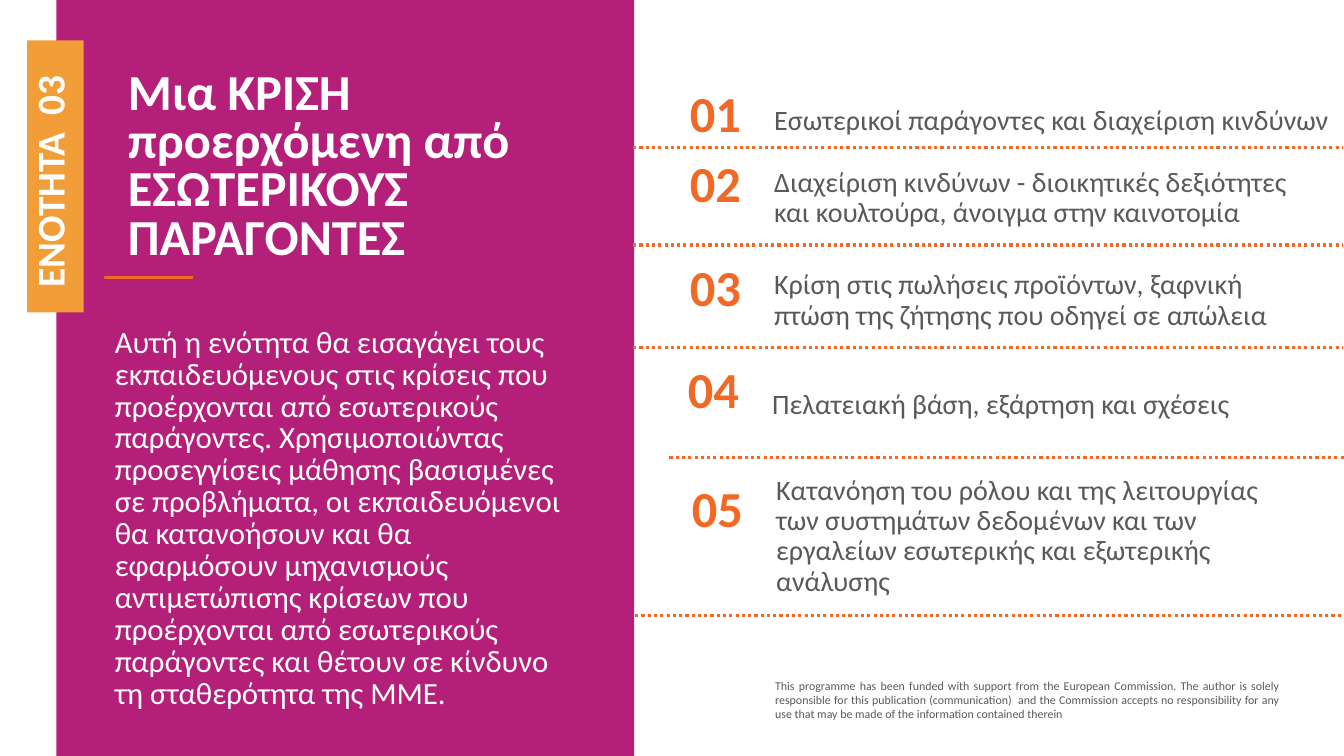
from lxml import etree
from pptx import Presentation
from pptx import util as u
from pptx.dml.color import RGBColor
from pptx.enum import dml, shapes, text
from pptx.oxml.ns import qn

COLORS = {"magenta": "B41F7A", "orange": "F16924", "amber": "F29E38",
          "grey": "595959", "white": "FFFFFF"}
NUMBER = {"size": u.Pt(36), "bold": True}
LINE_WIDTH = 704


class UnitSlide:
    scale = 9144
    font_name = "Calibri"

    def __init__(self, presentation):
        presentation.slide_width = self.px(1333)
        presentation.slide_height = self.px(750)
        self.slide = presentation.slides.add_slide(presentation.slide_layouts[6])

    def px(self, length):
        return u.Emu(length * self.scale)

    def color(self, name):
        return RGBColor.from_string(COLORS[name])

    def set_text(self, shape, words, color, font, paragraph_format, anchor):
        frame = shape.text_frame
        frame.word_wrap = True
        frame.vertical_anchor = anchor
        paragraph = frame.paragraphs[0]
        paragraph.text = words
        paragraph.font.color.rgb = self.color(color)
        for target, values in ((paragraph.font, {"name": self.font_name, **font}),
                               (paragraph, paragraph_format)):
            for name, value in values.items():
                setattr(target, name, value)
        return paragraph

    def label(self, box, words, color, font, paragraph_format,
              anchor=text.MSO_ANCHOR.MIDDLE):
        shape = self.slide.shapes.add_textbox(*map(self.px, box))
        self.set_text(shape, words, color, font, paragraph_format, anchor)

    def block(self, box, color, outline=None):
        shape = self.slide.shapes.add_shape(
            shapes.MSO_SHAPE.RECTANGLE, *map(self.px, box))
        shape.shadow.inherit = False
        shape.fill.solid()
        shape.fill.fore_color.rgb = self.color(color)
        if outline:
            shape.line.color.rgb = self.color(color)
            shape.line.width = u.Pt(outline)
        else:
            shape.line.fill.background()
        return shape

    def dotted_line(self, left, top):
        line = self.slide.shapes.add_connector(
            shapes.MSO_CONNECTOR.STRAIGHT,
            *map(self.px, (left, top, left + LINE_WIDTH, top)))
        line.line.color.rgb = self.color("orange")
        line.line.width = u.Pt(2.25)
        line.line.dash_style = dml.MSO_LINE.ROUND_DOT
        etree.SubElement(line._element.spPr, qn("a:effectLst"))

    def topic(self, number, number_at, words, words_box, line_at):
        self.label((*number_at, 91, 69), number, "orange", NUMBER,
                   {"line_spacing": 0.9, "alignment": text.PP_ALIGN.CENTER})
        self.label(words_box, words, "grey", {"size": u.Pt(20)},
                   {"line_spacing": 0.9})
        self.dotted_line(*line_at)


TOPICS = [
    ((664, 81), "Εσωτερικοί παράγοντες και διαχείριση κινδύνων",
     (758, 75, 575, 90), (628, 146)),
    ((664, 150), "Διαχείριση κινδύνων - διοικητικές δεξιότητες και κουλτούρα, "
     "άνοιγμα στην καινοτομία", (758, 162, 548, 69), (628, 243)),
    ((664, 253), "Κρίση στις πωλήσεις προϊόντων, ξαφνική πτώση της ζήτησης "
     "που οδηγεί σε απώλεια", (758, 264, 520, 69), (628, 345)),
    ((662, 355), "Πελατειακή βάση, εξάρτηση και σχέσεις",
     (756, 357, 521, 90), (664, 454)),
    ((666, 473), "Κατανόηση του ρόλου και της λειτουργίας των συστημάτων "
     "δεδομένων και των εργαλείων εσωτερικής και εξωτερικής ανάλυσης",
     (760, 498, 520, 69), (630, 611)),
]
INTRODUCTION = (
    "Αυτή η ενότητα θα εισαγάγει τους εκπαιδευόμενους στις κρίσεις που "
    "προέρχονται από εσωτερικούς παράγοντες. Χρησιμοποιώντας προσεγγίσεις "
    "μάθησης βασισμένες σε προβλήματα, οι εκπαιδευόμενοι θα κατανοήσουν και "
    "θα εφαρμόσουν μηχανισμούς αντιμετώπισης κρίσεων που προέρχονται από "
    "εσωτερικούς παράγοντες και θέτουν σε κίνδυνο τη σταθερότητα της ΜΜΕ.")
FUNDING = (
    "This programme has been funded with support from the European Commission. "
    "The author is solely responsible for this publication (communication)  and "
    "the Commission accepts no responsibility for any use that may be made of "
    "the information contained therein")


def main():
    presentation = Presentation()
    page = UnitSlide(presentation)
    top = text.MSO_ANCHOR.TOP

    page.block((56, 0, 573, 750), "magenta")
    page.label((117, 66, 479, 221), "Μια ΚΡΙΣΗ προερχόμενη από ΕΣΩΤΕΡΙΚΟΥΣ ΠΑΡΑΓΟΝΤΕΣ",
               "white", NUMBER, {"line_spacing": 0.8}, top)
    page.block((104, 274, 87, 2), "orange", 1)
    page.label((104, 320, 471, 303), INTRODUCTION, "white", {"size": u.Pt(22)},
               {"line_spacing": u.Pt(22.8)}, top)

    unit_tab = page.block((-80, 147, 270, 56), "amber")
    unit_tab.rotation = 270
    paragraph = page.set_text(
        unit_tab, "ΕΝΟΤΗΤΑ  03", "white", {"size": u.Pt(28), "bold": True},
        {"line_spacing": u.Pt(24.4), "alignment": text.PP_ALIGN.LEFT},
        text.MSO_ANCHOR.MIDDLE)
    paragraph._p.get_or_add_pPr().set("marL", str(page.px(15)))

    for index, (number_at, words, words_box, line_at) in enumerate(TOPICS, 1):
        page.topic(f"{index:02}", number_at, words, words_box, line_at)

    page.label((759, 668, 520, 53), FUNDING, "grey", {"size": u.Pt(8.5)},
               {"alignment": text.PP_ALIGN.JUSTIFY}, top)
    presentation.save("out.pptx")


if __name__ == "__main__":
    main()
